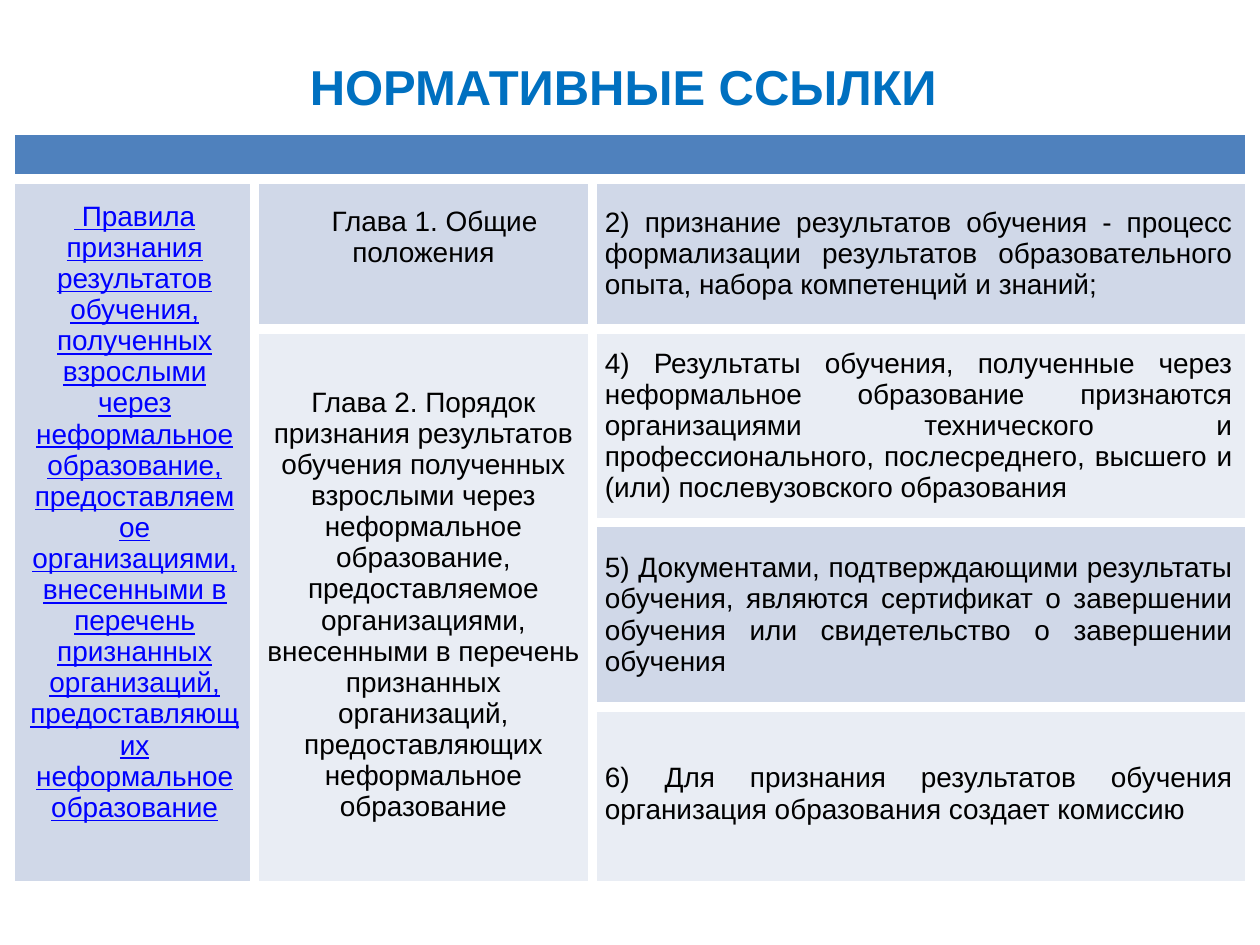
import dataclasses
import typing

import pptx
import pptx.dml.color
import pptx.enum.text
import pptx.oxml
import pptx.oxml.ns
import pptx.presentation
import pptx.slide
import pptx.table
import pptx.util
from pptx.util import Cm

COLORS = {
    "title": "0070C0",
    "header": "4F81BD",
    "dark_band": "D0D8E8",
    "light_band": "E9EDF4",
    "border": "FFFFFF",
    "link": "0000FF",
    "text": "000000",
}
FONT = "Arial"
COLUMN_WIDTHS = [4.83, 6.81, 13.16]
ROW_HEIGHTS = [0.89, 3.02, 3.91, 3.71, 3.51]
BORDER_WIDTH = pptx.util.Pt(6)
PLAIN_TABLE_STYLE = "{2D5ABB26-0587-4C30-8999-92F81FD0307C}"
CENTER = pptx.enum.text.PP_ALIGN.CENTER
JUSTIFY = pptx.enum.text.PP_ALIGN.JUSTIFY
MIDDLE = pptx.enum.text.MSO_ANCHOR.MIDDLE


@dataclasses.dataclass
class BodyCell:
    row: int
    column: int
    text: str
    fill: str
    row_span: int = 1
    color: str = "text"
    underline: bool = False
    bottom_margin: float = 0.13
    first_line_indent: float = 0

    @property
    def alignment(self) -> pptx.enum.text.PP_ALIGN:
        return JUSTIFY if self.column == 2 else CENTER

    @property
    def border_sides(self) -> str:
        sides = "L" if self.column > 0 else ""
        sides += "R" if self.column < len(COLUMN_WIDTHS) - 1 else ""
        sides += "T"
        sides += "B" if self.row + self.row_span < len(ROW_HEIGHTS) else ""
        return sides


BODY_CELLS = [
    BodyCell(
        1, 0,
        " Правила признания результатов обучения, полученных взрослыми через "
        "неформальное образование, предоставляемое организациями, внесенными в "
        "перечень признанных организаций, предоставляющих неформальное образование",
        "dark_band", row_span=4, color="link", underline=True, bottom_margin=0.85,
    ),
    BodyCell(
        1, 1, "Глава 1. Общие положения", "dark_band",
        bottom_margin=0.8, first_line_indent=0.45,
    ),
    BodyCell(
        1, 2,
        "2) признание результатов обучения - процесс формализации результатов "
        "образовательного опыта, набора компетенций и знаний;",
        "dark_band",
    ),
    BodyCell(
        2, 1,
        "Глава 2. Порядок признания результатов обучения полученных взрослыми через "
        "неформальное образование, предоставляемое организациями, внесенными в "
        "перечень признанных организаций, предоставляющих неформальное образование",
        "light_band", row_span=3,
    ),
    BodyCell(
        2, 2,
        "4) Результаты обучения, полученные через неформальное образование "
        "признаются организациями технического и профессионального, послесреднего, "
        "высшего и (или) послевузовского образования ",
        "light_band",
    ),
    BodyCell(
        3, 2,
        "5) Документами, подтверждающими результаты обучения, являются сертификат "
        "о завершении обучения или свидетельство о завершении обучения",
        "dark_band",
    ),
    BodyCell(
        4, 2,
        "6) Для признания результатов обучения организация образования создает комиссию ",
        "light_band",
    ),
]


def set_attributes(target: typing.Any, values: dict[str, typing.Any]) -> None:
    for name, value in values.items():
        setattr(target, name, value)


def rgb(color: str) -> pptx.dml.color.RGBColor:
    return pptx.dml.color.RGBColor.from_string(COLORS[color])


def write_text(
    paragraph: typing.Any, text: str, color: str, font_format: dict[str, typing.Any]
) -> None:
    run = paragraph.add_run()
    run.text = text
    set_attributes(run.font, {"name": FONT, **font_format})
    run.font.color.rgb = rgb(color)


def style_cell(cell: pptx.table._Cell, fill: str, border_sides: str) -> None:
    properties = cell._tc.get_or_add_tcPr()
    for side in border_sides:
        properties.append(pptx.oxml.parse_xml(
            f'<a:ln{side} {pptx.oxml.ns.nsdecls("a")} w="{BORDER_WIDTH}">'
            f'<a:solidFill><a:srgbClr val="{COLORS["border"]}"/></a:solidFill>'
            f'</a:ln{side}>'
        ))
    cell.fill.solid()
    cell.fill.fore_color.rgb = rgb(fill)


def draw_body_cell(table: pptx.table.Table, body_cell: BodyCell) -> None:
    cell = table.cell(body_cell.row, body_cell.column)
    if body_cell.row_span > 1:
        last_row = body_cell.row + body_cell.row_span - 1
        cell.merge(table.cell(last_row, body_cell.column))
    style_cell(cell, body_cell.fill, body_cell.border_sides)
    set_attributes(cell, {
        "vertical_anchor": MIDDLE,
        "margin_bottom": Cm(body_cell.bottom_margin),
    })
    paragraph = cell.text_frame.paragraphs[0]
    paragraph.alignment = body_cell.alignment
    if body_cell.first_line_indent:
        paragraph._p.get_or_add_pPr().set("indent", str(Cm(body_cell.first_line_indent)))
    write_text(paragraph, body_cell.text, body_cell.color, {
        "size": pptx.util.Pt(16), "underline": body_cell.underline,
    })


def draw_table(slide: pptx.slide.Slide) -> None:
    frame = slide.shapes.add_table(
        len(ROW_HEIGHTS), len(COLUMN_WIDTHS), Cm(0.3), Cm(2.72),
        Cm(sum(COLUMN_WIDTHS)), Cm(sum(ROW_HEIGHTS)),
    )
    table = frame.table
    table._tbl.tblPr.find(pptx.oxml.ns.qn("a:tableStyleId")).text = PLAIN_TABLE_STYLE
    for column, width in zip(table.columns, COLUMN_WIDTHS):
        column.width = Cm(width)
    for row, height in zip(table.rows, ROW_HEIGHTS):
        row.height = Cm(height)
    for header_cell in table.rows[0].cells:
        style_cell(header_cell, "header", "B")
        set_attributes(header_cell, {"margin_top": 0, "margin_bottom": 0})
    for body_cell in BODY_CELLS:
        draw_body_cell(table, body_cell)


def draw_title(slide: pptx.slide.Slide) -> None:
    title = slide.shapes.title
    set_attributes(title, {
        "left": Cm(1.27), "top": Cm(0.76), "width": Cm(22.86), "height": Cm(1.96),
    })
    set_attributes(title.text_frame, {"vertical_anchor": MIDDLE, "word_wrap": True})
    paragraph = title.text_frame.paragraphs[0]
    paragraph.alignment = CENTER
    write_text(paragraph, "НОРМАТИВНЫЕ ССЫЛКИ ", "title", {
        "size": pptx.util.Pt(28), "bold": True,
    })


def main() -> None:
    presentation = pptx.Presentation()
    set_attributes(presentation, {"slide_width": Cm(25.4), "slide_height": Cm(19.05)})
    slide = presentation.slides.add_slide(presentation.slide_layouts[5])
    draw_table(slide)
    draw_title(slide)
    presentation.save("out.pptx")


if __name__ == "__main__":
    main()
